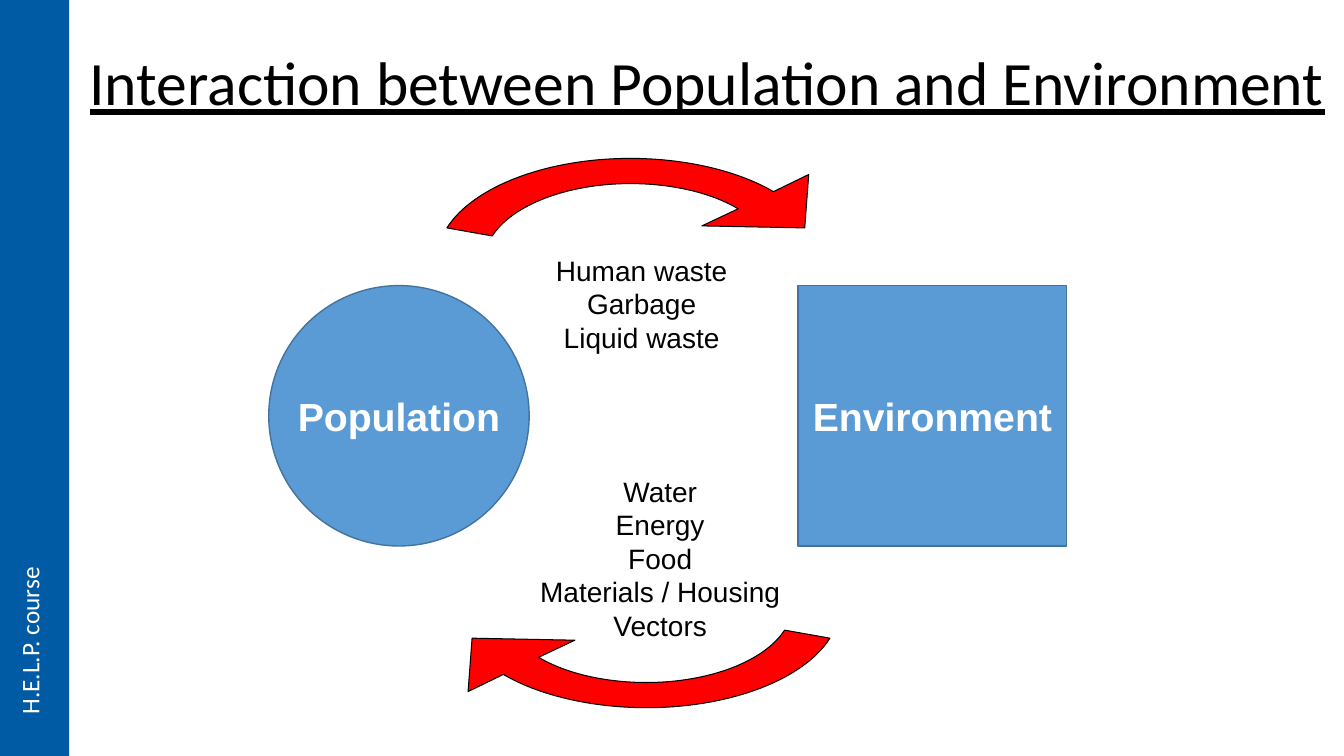
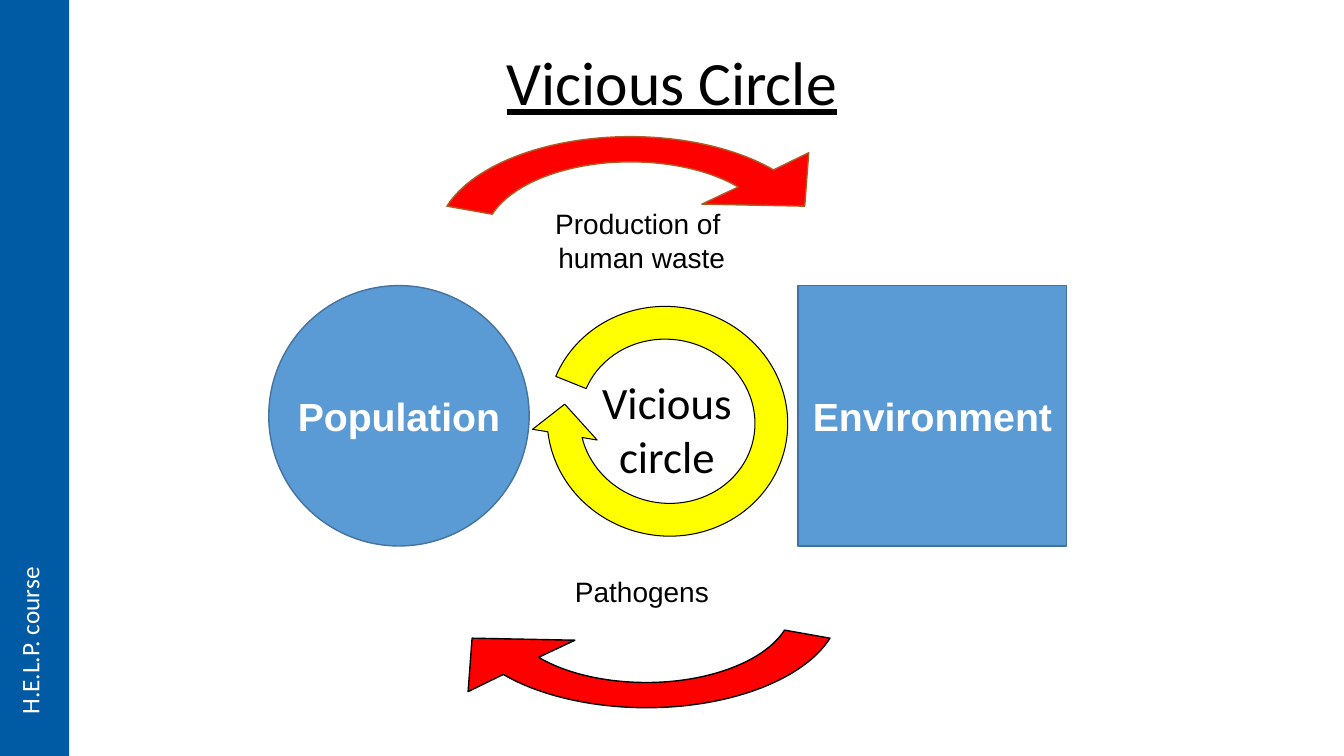
from lxml import etree
from pptx import Presentation
from pptx import util as u
from pptx.dml.color import RGBColor
from pptx.enum import shapes, text
from pptx.oxml.ns import qn

CELL = u.Inches(1) // 12  # the slide is a grid of 160 columns by 90 rows
COLS, ROWS = 160, 90

BAND = RGBColor(0x00, 0x5B, 0xA4)
BLUE = RGBColor(0x5B, 0x9B, 0xD5)
BLUE_EDGE = RGBColor(0x43, 0x73, 0x9E)
RED = RGBColor(0xFF, 0x00, 0x00)
BROWN = RGBColor(0xAF, 0x5C, 0x24)
YELLOW = RGBColor(0xFF, 0xFF, 0x00)
BLACK = RGBColor(0x00, 0x00, 0x00)
WHITE = RGBColor(0xFF, 0xFF, 0xFF)

# Arrow outline in cells: one point is a line, three are a Bézier curve.
ARROW_SIZE = (46, 24)
ARROW_START = (35.88, 6)
ARROW_PARTS = [
    [(32.64, 4.08), (27.96, 3), (23.04, 3)],
    [(15.6, 3), (9, 5.52), (6.6, 9.24)],
    [(1.2, 8.28)],
    [(4.32, 3.36), (13.08, 0), (23.04, 0)],
    [(29.52, 0), (35.76, 1.44), (40.08, 3.96)],
    [(44.28, 1.92)],
    [(43.8, 8.28)],
    [(31.56, 8.04)],
]


def cells(*lengths):
    return [u.Emu(round(n * CELL)) for n in lengths]


def write(tf, content, size=20, font="Arial", color=BLACK, bold=False,
          underline=False, align=text.PP_ALIGN.CENTER, spacing=None,
          anchor=text.MSO_ANCHOR.TOP, wrap=False):
    """Fill a text frame, one paragraph for each line of content."""
    tf.auto_size = text.MSO_AUTO_SIZE.NONE
    tf.word_wrap = wrap
    tf.vertical_anchor = anchor
    for i, line in enumerate(content.split("\n")):
        p = tf.add_paragraph() if i else tf.paragraphs[0]
        p.alignment = align
        p.line_spacing = spacing
        r = p.add_run()
        r.text = line
        r.font.size = u.Pt(size)
        r.font.name = font
        r.font.bold = bold
        r.font.underline = underline
        r.font.color.rgb = color


def paint(sp, fill, edge=None, width=0.75):
    sp.shadow.inherit = False
    sp.fill.solid()
    sp.fill.fore_color.rgb = fill
    if edge is None:
        sp.line.fill.background()
    else:
        sp.line.color.rgb = edge
        sp.line.width = u.Pt(width)


def add_preset(s, kind, box, fill, edge=None, width=0.75):
    sp = s.shapes.add_shape(kind, *cells(*box))
    paint(sp, fill, edge, width)
    return sp


def add_label(s, content, box, **fmt):
    sp = s.shapes.add_textbox(*cells(*box))
    write(sp.text_frame, content, **fmt)
    return sp


def add_step(outline, tag, points=()):
    step = etree.SubElement(outline, qn(tag))
    for point in points:
        x, y = cells(*point)
        etree.SubElement(step, qn("a:pt"), x=str(x), y=str(y))


def curve_outline(sp):
    """Replace the straight outline of a freeform by the curved arrow."""
    outline = sp.element.find(".//" + qn("a:path"))
    for step in list(outline):
        outline.remove(step)
    for name, length in zip("wh", cells(*ARROW_SIZE)):
        outline.set(name, str(length))
    add_step(outline, "a:moveTo", [ARROW_START])
    for part in ARROW_PARTS:
        add_step(outline, "a:cubicBezTo" if len(part) == 3 else "a:lnTo", part)
    add_step(outline, "a:close")


def add_red_arrow(s, left, top, edge=BLACK, width=0.75, rotation=0):
    builder = s.shapes.build_freeform(*cells(*ARROW_START))
    builder.add_line_segments([cells(*part[-1]) for part in ARROW_PARTS])
    sp = builder.convert_to_shape()
    curve_outline(sp)
    sp.left, sp.top, sp.width, sp.height = cells(left, top, *ARROW_SIZE)
    sp.rotation = rotation
    paint(sp, RED, edge, width)


def add_population_and_environment(s):
    for kind, name, left, width in (
            (shapes.MSO_SHAPE.OVAL, "Population", 32, 31),
            (shapes.MSO_SHAPE.RECTANGLE, "Environment", 95, 32)):
        sp = add_preset(s, kind, (left, 34, width, 31), BLUE, BLUE_EDGE, 1)
        write(sp.text_frame, name, size=28, color=WHITE, bold=True,
              anchor=text.MSO_ANCHOR.MIDDLE)


def add_course_band(prs, s):
    """Draw the side band on a slide, then move it to the master."""
    band = add_preset(s, shapes.MSO_SHAPE.RECTANGLE, (0, 0, 8.25, ROWS), BAND)
    name = add_label(s, "H.E.L.P. course", (1.1, 67.25, 6, 19), size=18,
                     font="Calibri", color=WHITE, align=text.PP_ALIGN.LEFT)
    name.element.find(".//" + qn("a:bodyPr")).set("vert", "vert270")
    tree = prs.slide_master.shapes.element
    for i, sp in enumerate((band, name)):
        tree.insert(2 + i, sp.element)


def add_titled_slide(prs, title, left, width):
    s = prs.slides.add_slide(prs.slide_layouts.get_by_name("Title Only"))
    sp = s.shapes.title
    sp.left, sp.top, sp.width, sp.height = cells(left, 4.8, width, 10.8)
    write(sp.text_frame, title, size=44, font="Calibri", underline=True,
          spacing=0.9, anchor=text.MSO_ANCHOR.MIDDLE, wrap=True)
    return s


def build_interaction(prs):
    s = add_titled_slide(prs, "Interaction between Population and Environment",
                         8.35, 151.7)
    add_label(s, "Water\nEnergy\nFood\nMaterials / Housing\nVectors",
              (63, 55.84, 31.2, 21.5))
    add_red_arrow(s, 54, 60.25, rotation=180)
    add_population_and_environment(s)
    add_label(s, "Human waste\nGarbage\nLiquid waste", (64.94, 29.56, 22.9, 13.3))
    add_red_arrow(s, 52, 18.86)
    return s


def build_vicious_circle(prs):
    s = add_titled_slide(prs, "Vicious Circle", 11, 138)
    add_red_arrow(s, 52, 16.27, edge=BROWN, width=1)
    add_red_arrow(s, 54, 60.25, width=1, rotation=180)
    add_label(s, "Production of \nhuman waste", (64.8, 24, 23.2, 9.4))
    add_label(s, "Pathogens", (67.2, 67.8, 18.45, 5.3))
    add_label(s, "Vicious circle", (70.1, 44, 18.6, 14.2), size=32,
              font="Calibri", wrap=True)
    ring = add_preset(s, shapes.MSO_SHAPE.CIRCULAR_ARROW,
                      (63.15, 34.55, 32.6, 31.2), YELLOW, BLACK)
    ring.rotation = 191.6
    for i, value in enumerate((0.125, 10.14, 204.58, 6.18, 0.125)):
        ring.adjustments[i] = value
    add_population_and_environment(s)


def main():
    prs = Presentation()
    prs.slide_width, prs.slide_height = cells(COLS, ROWS)
    add_course_band(prs, build_interaction(prs))
    build_vicious_circle(prs)
    prs.save("out.pptx")


if __name__ == "__main__":
    main()
